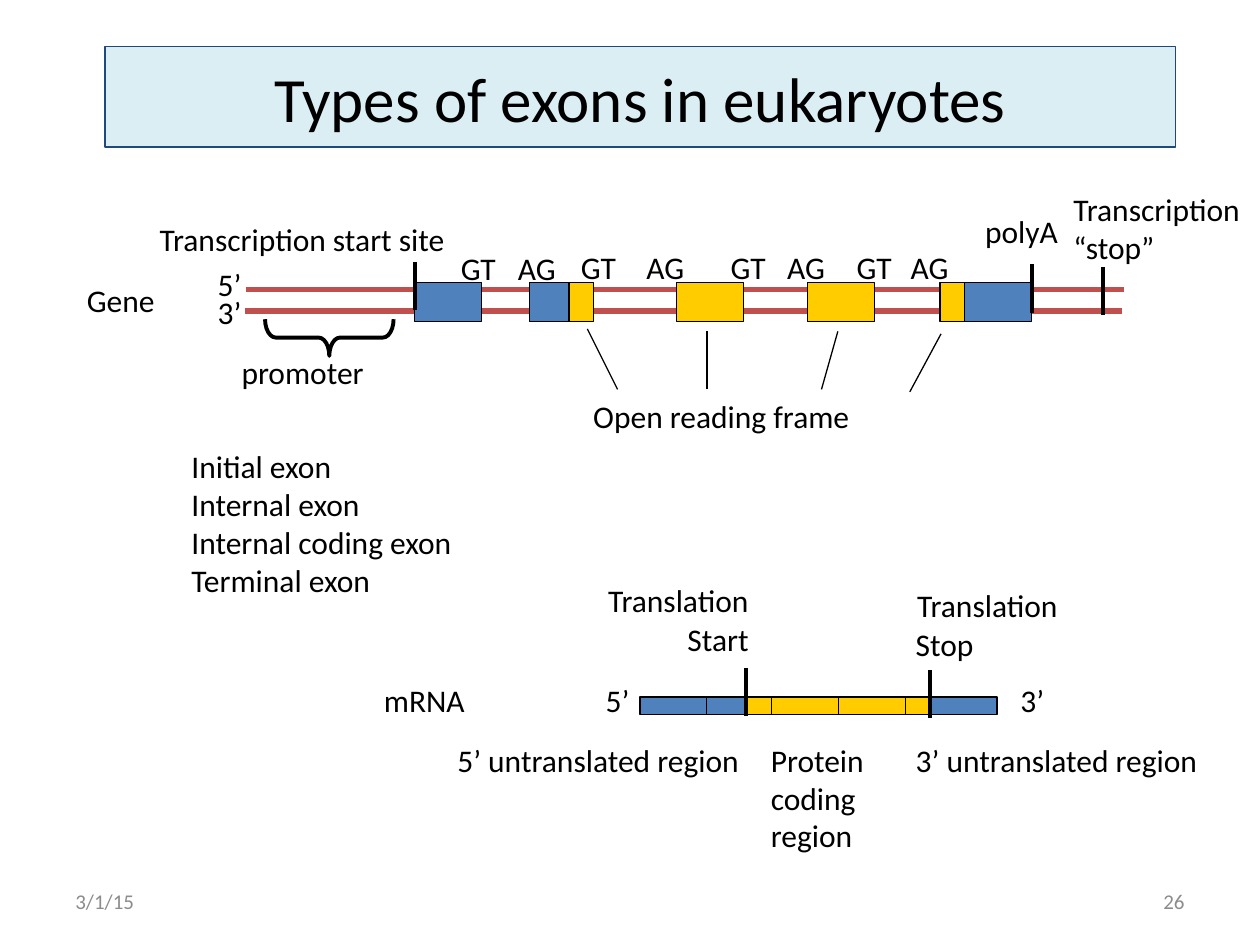
from lxml.etree import SubElement
from pptx import Presentation
from pptx.dml.color import RGBColor
from pptx.enum.shapes import MSO_CONNECTOR as Connector, MSO_SHAPE as Preset
from pptx.enum.text import MSO_ANCHOR as Anchor, MSO_AUTO_SIZE as AutoSize, PP_ALIGN as Align
from pptx.oxml.ns import qn
from pptx.util import Cm, Pt

FONT = "Calibri"
BLACK, GREY, RED = "000000", "8C8C8C", "C0504D"
UTR, CODING = "4F81BD", "FFCC00"
LONG, MEDIUM, SHORT = 1.35, 0.8, 0.5

TITLE = "Types of exons in eukaryotes"
GENE_TOP, GENE_HEIGHT = 5.69, 0.79
MRNA_LEFT, MRNA_TOP, MRNA_HEIGHT = 12.9, 14.05, 0.36
TICK_LENGTH = 0.97

EXONS = [
    (8.36, [(UTR, LONG)]),
    (10.67, [(UTR, MEDIUM), (CODING, SHORT)]),
    (13.64, [(CODING, LONG)]),
    (16.28, [(CODING, LONG)]),
    (18.95, [(CODING, SHORT), (UTR, LONG)]),
]
STRANDS = [(4.93, 6.27, 22.61, 6.27), (4.95, 5.84, 22.66, 5.84)]
TICKS = [(8.36, 5.28), (20.8, 5.33), (22.23, 5.38), (15.04, 13.46), (18.75, 13.51)]
FRAME_POINTERS = [
    (12.45, 7.85, 11.84, 6.63),
    (14.25, 7.85, 14.25, 6.68),
    (16.56, 7.85, 16.89, 6.68),
    (18.34, 7.9, 18.97, 6.73),
]
SPLICE_SITES = [
    ("GT", 9.04, 4.9), ("AG", 10.19, 4.9), ("GT", 11.46, 4.88), ("AG", 12.78, 4.88),
    ("GT", 14.48, 4.88), ("AG", 15.62, 4.88), ("GT", 17.02, 4.88), ("AG", 18.11, 4.88),
]
SPLICE_WIDTHS = {"GT": 1.22, "AG": 1.3}
LABELS = [
    (["Gene"], 1.5, 5.54, 1.9),
    (["5’"], 4.14, 5.21, 1.17),
    (["3’"], 4.14, 5.79, 1.17),
    (["Transcription start site"], 2.97, 4.32, 6.38),
    (["polyA"], 19.61, 4.14, 2.01),
    (["Transcription", "“stop”"], 21.39, 3.71, 3.96),
    (["promoter"], 4.62, 6.99, 3.02),
    (["Open reading frame"], 11.71, 7.87, 5.74),
    (["Initial exon", "Internal exon", "Internal coding exon", "Terminal exon"], 3.61, 8.89, 5.84),
    (["Translation"], 12.01, 11.58, 3.43),
    (["Start"], 13.61, 12.37, 1.78),
    (["Translation"], 18.24, 11.68, 3.43),
    (["Stop"], 18.21, 12.47, 1.7),
    (["mRNA"], 7.49, 13.61, 2.16),
    (["5’"], 11.96, 13.61, 1.17),
    (["3’"], 20.32, 13.61, 1.17),
    (["5’ untranslated region"], 8.97, 14.81, 6.71),
    (["Protein", "coding", "region"], 15.29, 14.81, 2.41),
    (["3’ untranslated region"], 18.21, 14.81, 6.78),
]
FOOTERS = [("3/1/15", 1.27, Align.LEFT), ("26", 18.21, Align.RIGHT)]


def color(value):
    return RGBColor.from_string(value)


def set_line(line, value, width):
    line.color.rgb = color(value)
    line.width = Pt(width)


def write(paragraph, text, size, value=BLACK, align=Align.LEFT):
    paragraph.alignment = align
    run = paragraph.add_run()
    run.text = text
    run.font.name = FONT
    run.font.size = Pt(size)
    run.font.color.rgb = color(value)


def add_title(slide):
    title = slide.shapes.title
    title.left, title.top, title.width, title.height = Cm(2.11), Cm(0.94), Cm(21.59), Cm(2.03)
    title.fill.solid()
    title.fill.fore_color.rgb = color("DBEEF4")
    set_line(title.line, "1F497D", 1)
    title.text_frame.vertical_anchor = Anchor.MIDDLE
    write(title.text_frame.paragraphs[0], TITLE, 36, align=Align.CENTER)


def add_line(slide, ends, value, width):
    connector = slide.shapes.add_connector(Connector.STRAIGHT, *map(Cm, ends))
    set_line(connector.line, value, width)
    SubElement(connector._element.spPr, qn("a:effectLst"))


def add_segments(slide, left, top, height, segments):
    for fill, width in segments:
        box = slide.shapes.add_shape(Preset.RECTANGLE, Cm(left), Cm(top), Cm(width), Cm(height))
        box.shadow.inherit = False
        box.fill.solid()
        box.fill.fore_color.rgb = color(fill)
        set_line(box.line, BLACK, 0.75)
        left += width


def add_brace(slide):
    brace = slide.shapes.add_shape(Preset.LEFT_BRACE, Cm(6.27), Cm(5.51), Cm(0.74), Cm(2.59))
    brace.rotation = 270
    brace.adjustments[0] = 0.29
    brace.shadow.inherit = False
    brace.fill.background()
    set_line(brace.line, BLACK, 2.25)


def add_label(slide, lines, left, top, width):
    height = 0.25 + 0.76 * len(lines)
    frame = slide.shapes.add_textbox(Cm(left), Cm(top), Cm(width), Cm(height)).text_frame
    frame.word_wrap = False
    frame.auto_size = AutoSize.SHAPE_TO_FIT_TEXT
    for index, line in enumerate(lines):
        paragraph = frame.add_paragraph() if index else frame.paragraphs[0]
        write(paragraph, line, 18)


def add_footer(slide, text, left, align):
    frame = slide.shapes.add_textbox(Cm(left), Cm(17.65), Cm(5.92), Cm(1.02)).text_frame
    frame.word_wrap = True
    frame.vertical_anchor = Anchor.MIDDLE
    write(frame.paragraphs[0], text, 12, GREY, align)


def main():
    presentation = Presentation()
    presentation.slide_width, presentation.slide_height = Cm(25.4), Cm(19.05)
    slide = presentation.slides.add_slide(presentation.slide_layouts[5])
    add_title(slide)
    for strand in STRANDS:
        add_line(slide, strand, RED, 3)
    for left, segments in EXONS:
        add_segments(slide, left, GENE_TOP, GENE_HEIGHT, segments)
    spliced = [segment for _, segments in EXONS for segment in segments]
    add_segments(slide, MRNA_LEFT, MRNA_TOP, MRNA_HEIGHT, spliced)
    for x, top in TICKS:
        add_line(slide, (x, top, x, top + TICK_LENGTH), BLACK, 2.25)
    for pointer in FRAME_POINTERS:
        add_line(slide, pointer, BLACK, 0.75)
    add_brace(slide)
    for label in LABELS:
        add_label(slide, *label)
    for site, left, top in SPLICE_SITES:
        add_label(slide, [site], left, top, SPLICE_WIDTHS[site])
    for footer in FOOTERS:
        add_footer(slide, *footer)
    presentation.save("out.pptx")


if __name__ == "__main__":
    main()
